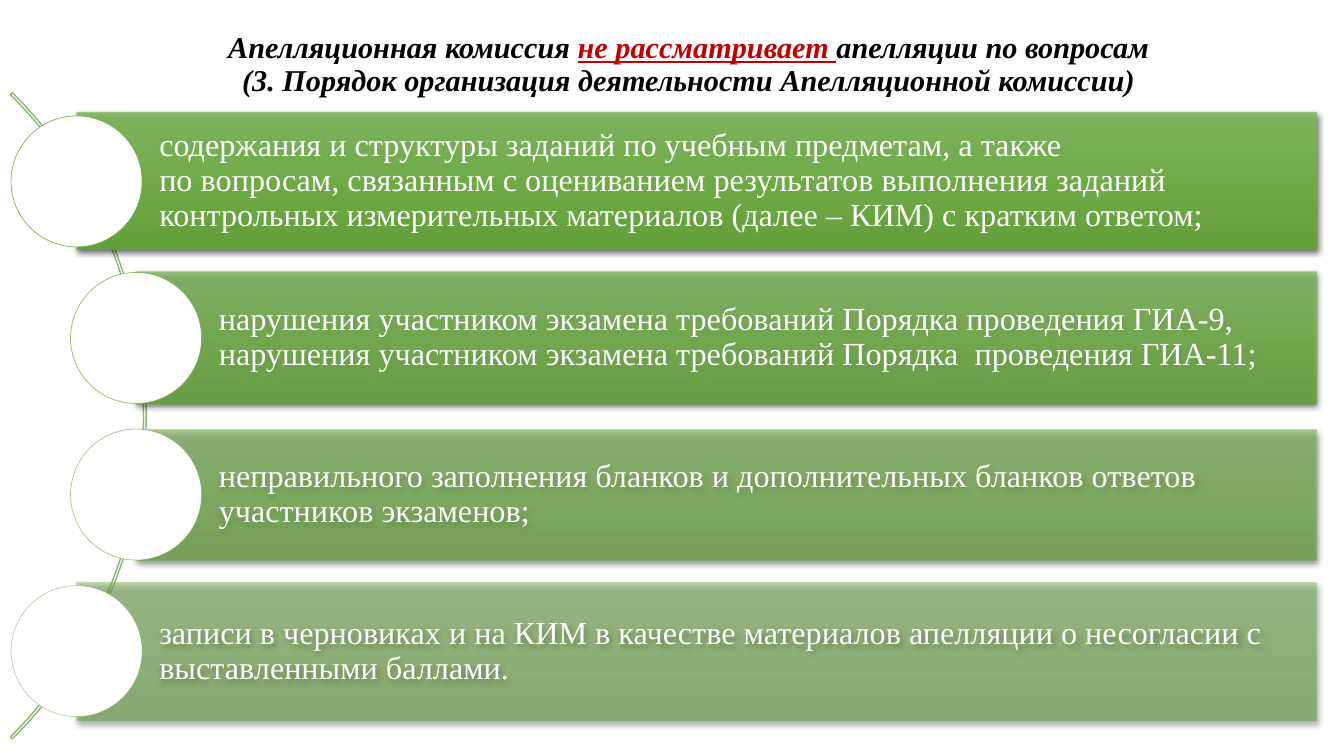
import pptx
import pptx.util
import pptx.dml.color
import pptx.enum.shapes
import pptx.enum.text
import pptx.oxml
import pptx.oxml.ns
from lxml import etree

Inches, Pt = pptx.util.Inches, pptx.util.Pt
RGB = pptx.dml.color.RGBColor.from_string
SHAPE = pptx.enum.shapes.MSO_SHAPE
ALIGN = pptx.enum.text.PP_ALIGN
MIDDLE = pptx.enum.text.MSO_ANCHOR.MIDDLE
qn = pptx.oxml.ns.qn


class Theme:
    font = "Times New Roman"
    title_size, item_size = 21.6, 23
    black, white, accent = "000000", "FFFFFF", "C00000"
    arc, ring = "88B76F", "70AD47"
    gradient = {0: "81B861", 50: "6FB242", 100: "62A336"}


TITLE_LINES = [
    [("Апелляционная комиссия ", {}),
     ("не рассматривает ", {"color": Theme.accent, "underline": True}),
     ("апелляции по вопросам", {})],
    [("(3. Порядок организация деятельности Апелляционной комиссии)", {})],
]

# left, top, height of each bar, and its lines of text
ITEMS = [
    (0.76, 1.12, 1.35, [
        "содержания и структуры заданий по учебным предметам, а также",
        "по вопросам, связанным с оцениванием результатов выполнения заданий "
        "контрольных измерительных материалов (далее – КИМ) с кратким ответом;"]),
    (1.35, 2.69, 1.32, [
        "нарушения участником экзамена требований Порядка проведения ГИА-9, "
        "нарушения участником экзамена требований Порядка  проведения ГИА-11;"]),
    (1.35, 4.26, 1.3, [
        "неправильного заполнения бланков и дополнительных бланков ответов "
        "участников экзаменов;"]),
    (0.76, 5.78, 1.37, [
        "записи в черновиках и на КИМ в качестве материалов апелляции "
        "о несогласии с выставленными баллами."]),
]
BAR_RIGHT = 13.06
CIRCLE = 1.3
FIRST_CIRCLE_TOP, LAST_CIRCLE_TOP = 1.15, 5.81
FIRST_ALPHA, LAST_ALPHA = 90, 50


def put_text(tf, lines, size, margins, align, color, **style):
    """Fill a frame with one paragraph; each line is a list of (text, format) runs."""
    frame = {"word_wrap": True, "vertical_anchor": MIDDLE,
             "auto_size": pptx.enum.text.MSO_AUTO_SIZE.NONE}
    for name, value in frame.items():
        setattr(tf, name, value)
    for side, value in zip(("left", "top", "right", "bottom"), margins):
        setattr(tf, "margin_" + side, Inches(value))
    p = tf.paragraphs[0]
    p.alignment, p.line_spacing = align, 0.9
    for i, line in enumerate(lines):
        if i:
            p.add_line_break()
        for text, extra in line:
            r = p.add_run()
            r.text = text
            look = {"name": Theme.font, "size": Pt(size), **style, **extra}
            r.font.color.rgb = RGB(look.pop("color", color))
            for name, value in look.items():
                setattr(r.font, name, value)


def set_gradient(sp, alpha):
    """Vertical three-stop fill, equally see-through at every stop."""
    sp.fill.background()
    stops = "".join(
        f'<a:gs pos="{pos * 1000}"><a:srgbClr val="{color}">'
        f'<a:alpha val="{round(alpha * 1000)}"/></a:srgbClr></a:gs>'
        for pos, color in Theme.gradient.items())
    fill = pptx.oxml.parse_xml(
        f'<a:gradFill {pptx.oxml.ns.nsdecls("a")} rotWithShape="1">'
        f'<a:gsLst>{stops}</a:gsLst><a:lin ang="5400000" scaled="0"/></a:gradFill>')
    spPr = sp._element.spPr
    spPr.replace(spPr.find(qn("a:noFill")), fill)


def set_shadow(sp):
    effects = sp._element.spPr.find(qn("a:effectLst"))
    shadow = etree.SubElement(
        effects, qn("a:outerShdw"), blurRad=str(Pt(4.5)), dist=str(Pt(1.5)),
        dir="5400000", algn="ctr", rotWithShape="0")
    color = etree.SubElement(shadow, qn("a:srgbClr"), val=Theme.black)
    etree.SubElement(color, qn("a:alpha"), val="63000")


def add_plain(shapes, kind, box):
    sp = shapes.add_shape(kind, *map(Inches, box))
    sp.shadow.inherit = False
    return sp


def add_title(s, box):
    title = s.shapes.title
    title.left, title.top, title.width, title.height = map(Inches, box)
    put_text(title.text_frame, TITLE_LINES, Theme.title_size, (0.1, 0.05, 0.1, 0.05),
             ALIGN.CENTER, Theme.black, bold=True, italic=True)


def add_arc(shapes, box):
    sp = add_plain(shapes, SHAPE.BLOCK_ARC, box)
    for i, value in enumerate((189, 27, 0.3 / 100)):
        sp.adjustments[i] = value
    sp.fill.background()
    sp.line.color.rgb = RGB(Theme.arc)
    sp.line.width = Pt(1)


def add_bar(shapes, box, lines, alpha):
    sp = add_plain(shapes, SHAPE.RECTANGLE, box)
    set_gradient(sp, alpha)
    sp.line.fill.background()
    set_shadow(sp)
    put_text(sp.text_frame, [[(line, {})] for line in lines], Theme.item_size,
             (0.82, 0.06, 0.06, 0.06), ALIGN.LEFT, Theme.white)


def add_circle(shapes, box, alpha):
    sp = add_plain(shapes, SHAPE.OVAL, box)
    sp.fill.solid()
    sp.fill.fore_color.rgb = RGB(Theme.white)
    sp.line.color.rgb = RGB(Theme.ring)
    sp.line.width = Pt(0.5)
    color = sp.line._ln.find(".//" + qn("a:srgbClr"))
    etree.SubElement(color, qn("a:alpha"), val=str(round(alpha * 1000)))


def add_list(s, arc_box):
    """Arc with bars along it, each bar led by a circle centred on its left edge."""
    shapes = s.shapes.add_group_shape().shapes
    add_arc(shapes, arc_box)
    for i, (left, top, height, lines) in enumerate(ITEMS):
        part = i / (len(ITEMS) - 1)
        alpha = FIRST_ALPHA + part * (LAST_ALPHA - FIRST_ALPHA)
        circle_top = FIRST_CIRCLE_TOP + part * (LAST_CIRCLE_TOP - FIRST_CIRCLE_TOP)
        add_bar(shapes, (left, top, BAR_RIGHT - left, height), lines, alpha)
        add_circle(shapes, (left - CIRCLE / 2, circle_top, CIRCLE, CIRCLE), alpha)


def main():
    prs = pptx.Presentation()
    prs.slide_width, prs.slide_height = Inches(13.33), Inches(7.5)
    s = prs.slides.add_slide(prs.slide_layouts[5])
    add_title(s, (1.08, 0.37, 11.5, 0.55))
    add_list(s, (-7.62, -0.41, 9.07, 9.07))
    prs.save("out.pptx")


if __name__ == "__main__":
    main()
